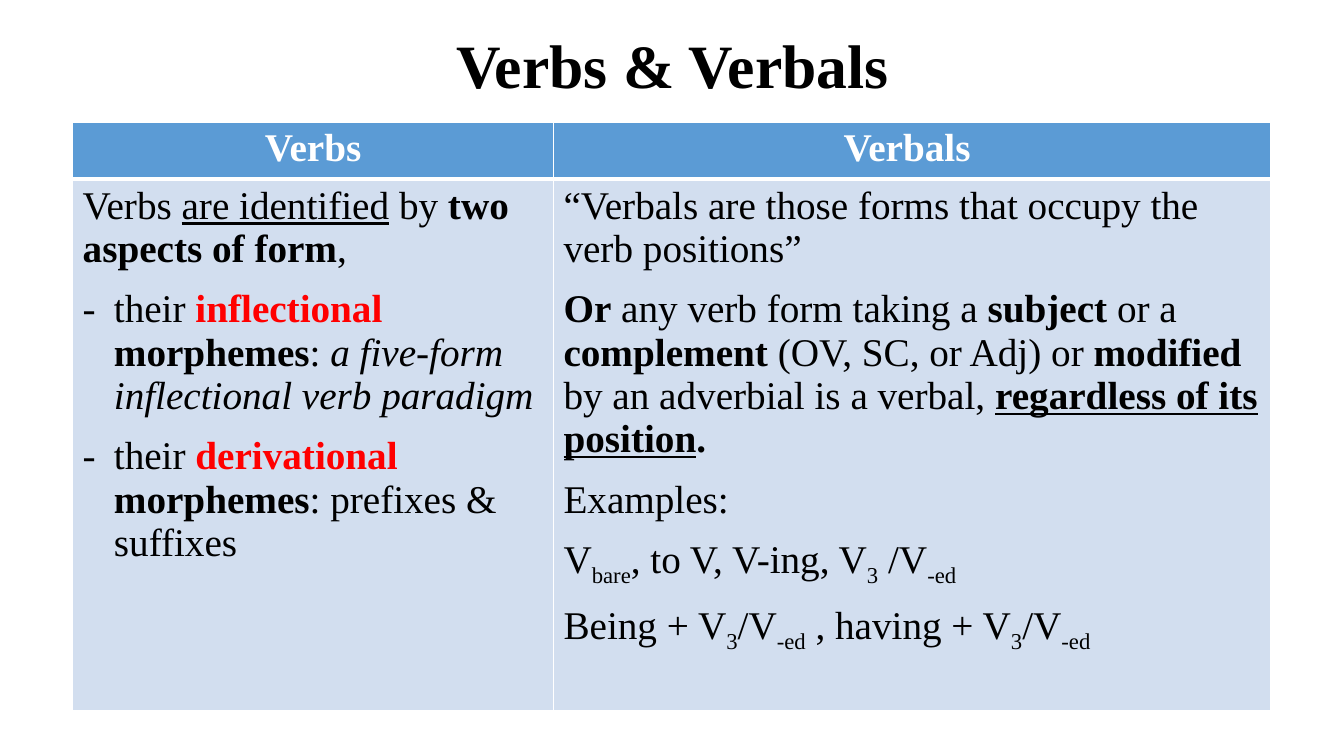
from pptx import Presentation
from pptx.dml.color import RGBColor
from pptx.enum.text import MSO_ANCHOR, PP_ALIGN
from pptx.oxml.ns import qn
from pptx.util import Inches, Pt
from lxml.etree import SubElement

BLACK = RGBColor(0x00, 0x00, 0x00)
WHITE = RGBColor(0xFF, 0xFF, 0xFF)
RED = RGBColor(0xFF, 0x00, 0x00)
HEADER_BLUE = RGBColor(0x5B, 0x9B, 0xD5)
BODY_BLUE = RGBColor(0xD2, 0xDE, 0xEF)
FONT = "Times New Roman"

# Style codes: b bold, i italic, u underline, r red, s subscript
HEADERS = ["Verbs", "Verbals "]
VERBS = [
    [("Verbs ", ""), ("are identified", "u"), (" by ", ""),
     ("two aspects of form", "b"), (",", "")],
    [("their ", ""), ("inflectional", "br"), (" morphemes", "b"), (": ", ""),
     ("a five-form inflectional verb paradigm", "i")],
    [("their ", ""), ("derivational", "br"), (" morphemes", "b"),
     (": prefixes & suffixes", "")],
]
VERBALS = [
    [("“Verbals are those forms that occupy the verb positions”", "")],
    [("Or", "b"), (" any verb form taking a ", ""), ("subject", "b"),
     (" or a ", ""), ("complement", "b"), (" (OV, SC, or Adj) or ", ""),
     ("modified", "b"), (" by an adverbial is a verbal, ", ""),
     ("regardless of its position", "bu"), (".", "b")],
    [("Examples:", "")],
    [("V", ""), ("bare", "s"), (", to V, V-ing, V", ""), ("3", "s"),
     (" /V", ""), ("-ed", "s")],
    [("Being + V", ""), ("3", "s"), ("/V", ""), ("-ed", "s"),
     (" , having + V", ""), ("3", "s"), ("/V", ""), ("-ed", "s")],
]


def add_run(p, text, style="", size=28, color=BLACK):
    r = p.add_run()
    r.text = text
    font = r.font
    font.name, font.size = FONT, Pt(size)
    font.bold = "b" in style
    font.italic = "i" in style
    font.underline = "u" in style
    font.color.rgb = RED if "r" in style else color
    if "s" in style:
        r._r.get_or_add_rPr().set("baseline", "-25000")


def add_dash(p):
    pPr = p._p.get_or_add_pPr()
    pPr.set("marL", str(Inches(0.31)))
    pPr.set("indent", str(-Inches(0.31)))
    SubElement(pPr, qn("a:buFont")).set("typeface", FONT)
    SubElement(pPr, qn("a:buChar")).set("char", "-")


def style_cell(cell, fill, top, bottom):
    tcPr = cell._tc.get_or_add_tcPr()
    for side, width in (("L", 1), ("R", 1), ("T", top), ("B", bottom)):
        ln = SubElement(tcPr, qn(f"a:ln{side}"), w=str(Pt(width)))
        solid = SubElement(ln, qn("a:solidFill"))
        SubElement(solid, qn("a:srgbClr")).set("val", str(WHITE))
    cell.fill.solid()
    cell.fill.fore_color.rgb = fill


def fill_body(cell, paragraphs, dashed):
    tf = cell.text_frame
    for i, runs in enumerate(paragraphs):
        p = tf.add_paragraph() if i else tf.paragraphs[0]
        if i and dashed:
            add_dash(p)
        p.space_before = Pt(6 if i else 0)
        p.space_after = Pt(6)
        for text, style in runs:
            add_run(p, text, style)


def add_title(s, text):
    tf = s.shapes.add_textbox(Inches(0.92), Inches(0.26),
                              Inches(11.5), Inches(0.84)).text_frame
    tf.word_wrap = True
    tf.vertical_anchor = MSO_ANCHOR.MIDDLE
    p = tf.paragraphs[0]
    p.alignment = PP_ALIGN.CENTER
    p.line_spacing = 0.9
    add_run(p, text, "b", 44)


def add_comparison(s):
    table = s.shapes.add_table(2, 2, Inches(0.72), Inches(1.21),
                               Inches(11.88), Inches(5.8)).table
    for col, width in zip(table.columns, (4.77, 7.11)):
        col.width = Inches(width)
    for row, height in zip(table.rows, (0.53, 5.27)):
        row.height = Inches(height)

    # Header row
    for i, text in enumerate(HEADERS):
        cell = table.cell(0, i)
        style_cell(cell, HEADER_BLUE, 1, 3)
        p = cell.text_frame.paragraphs[0]
        p.alignment = PP_ALIGN.CENTER
        add_run(p, text, "b", color=WHITE)

    # Body row
    for i, (paragraphs, dashed) in enumerate([(VERBS, True), (VERBALS, False)]):
        cell = table.cell(1, i)
        style_cell(cell, BODY_BLUE, 3, 1)
        fill_body(cell, paragraphs, dashed)


def main():
    prs = Presentation()
    prs.slide_width, prs.slide_height = Inches(13.33), Inches(7.5)
    s = prs.slides.add_slide(prs.slide_layouts[6])
    add_title(s, "Verbs & Verbals")
    add_comparison(s)
    prs.save("out.pptx")


if __name__ == "__main__":
    main()
